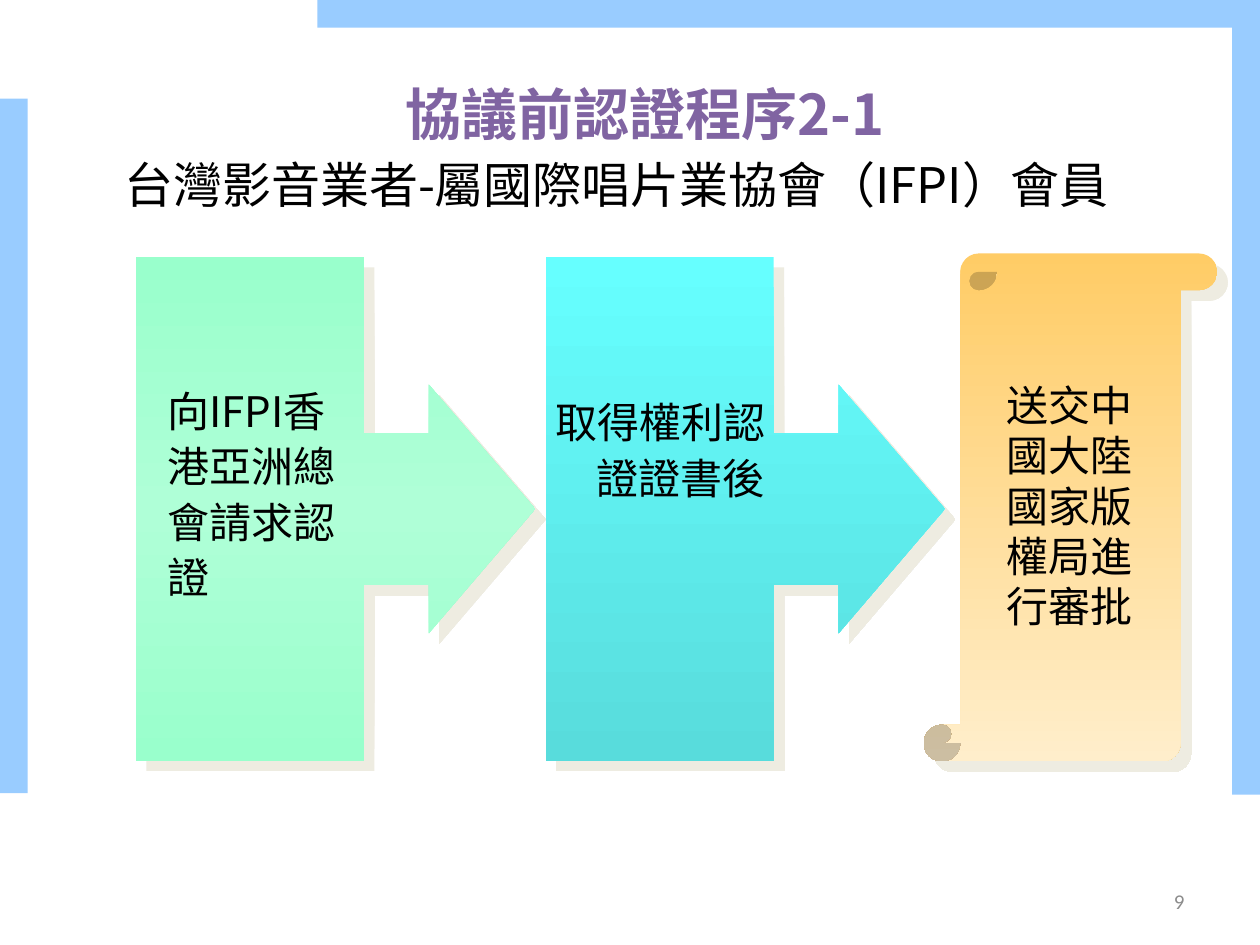
from copy import deepcopy
from dataclasses import dataclass

from lxml import etree
from pptx import Presentation
from pptx import util as u
from pptx.dml.color import RGBColor
from pptx.enum import shapes, text
from pptx.oxml import ns


@dataclass(frozen=True)
class Theme:
    frame: str = "99CCFF"
    title: str = "8064A2"
    body: str = "000000"
    number: str = "8C8C8C"
    shadow: str = "EEECE1"
    green: tuple = ("99FFCC", "AFFFD7", "99FFCC")
    cyan: tuple = ("66FFFF", "58DCDC")
    gold: tuple = ("FFCC66", "FFEECB")
    cjk_font: str = "Noto Sans CJK SC"
    latin_font: str = "Calibri"
    title_size: int = 32
    subtitle_size: int = 28
    body_size: int = 24
    number_size: int = 12


def write(frame, words, *, font, size, color, bold=False,
          align=text.PP_ALIGN.LEFT, line_spacing=None, hanging=0):
    para = frame.paragraphs[0]
    para.alignment = align
    para.space_before = u.Pt(0)
    if line_spacing:
        para.line_spacing = line_spacing
    if hanging:
        properties = para._p.get_or_add_pPr()
        properties.set("marL", str(u.Cm(hanging)))
        properties.set("indent", str(-u.Cm(hanging)))
    span = para.add_run()
    span.text = words
    span.font.size = u.Pt(size)
    span.font.bold = bold
    span.font.color.rgb = RGBColor.from_string(color)
    span.font.name = font
    etree.SubElement(span.font._element, ns.qn("a:ea"), typeface=font)


class SlideBuilder:
    def __init__(self, slide, theme):
        self.slide = slide
        self.theme = theme

    def shape(self, kind, area, adjustments=()):
        shape = self.slide.shapes.add_shape(kind, *map(u.Cm, area))
        shape.shadow.inherit = False
        shape.line.fill.background()
        for index, value in enumerate(adjustments):
            shape.adjustments[index] = value
        return shape

    def bar(self, *area):
        bar = self.shape(shapes.MSO_SHAPE.RECTANGLE, area)
        bar.fill.solid()
        bar.fill.fore_color.rgb = RGBColor.from_string(self.theme.frame)

    def panel(self, kind, area, colors, adjustments):
        panel = self.shape(kind, area, adjustments)
        panel.fill.gradient()
        panel.fill.gradient_angle = 270
        stop_list = panel._element.spPr.find(".//" + ns.qn("a:gsLst"))
        while len(stop_list) < len(colors):
            stop_list.append(deepcopy(stop_list[-1]))
        for index, (stop, color) in enumerate(zip(panel.fill.gradient_stops, colors)):
            stop.position = index / (len(colors) - 1)
            stop.color.rgb = RGBColor.from_string(color)
        self.drop_shadow(panel)

    def drop_shadow(self, shape):
        effects = shape._element.spPr.find(ns.qn("a:effectLst"))
        shadow = etree.SubElement(effects, ns.qn("a:outerShdw"), blurRad="0",
                                  dist=str(u.Pt(8.5)), dir="2700000",
                                  algn="ctr", rotWithShape="0")
        etree.SubElement(shadow, ns.qn("a:srgbClr"), val=self.theme.shadow)

    def text(self, words, area, anchor=text.MSO_ANCHOR.TOP, **style):
        box = self.slide.shapes.add_textbox(*map(u.Cm, area))
        box.text_frame.word_wrap = True
        box.text_frame.vertical_anchor = anchor
        defaults = {"font": self.theme.cjk_font, "size": self.theme.body_size,
                    "color": self.theme.body}
        write(box.text_frame, words, **(defaults | style))


def main():
    theme = Theme()
    deck = Presentation()
    deck.slide_width, deck.slide_height = u.Cm(25.4), u.Cm(19.05)
    page = SlideBuilder(deck.slides.add_slide(deck.slide_layouts[6]), theme)
    align = text.PP_ALIGN

    page.bar(6.4, 0, 19, 0.56)
    page.bar(24.84, 0.53, 0.56, 15.49)
    page.bar(0, 1.99, 0.56, 14)

    page.text("協議前認證程序2-1", (4.65, 1.47, 16.71, 1.63), size=theme.title_size,
              color=theme.title, bold=True, align=align.CENTER)
    page.text("台灣影音業者-屬國際唱片業協會（IFPI）會員", (2.26, 3, 21.87, 1.45),
              size=theme.subtitle_size)

    for step, colors in enumerate((theme.green, theme.cyan)):
        page.panel(shapes.MSO_SHAPE.RIGHT_ARROW_CALLOUT,
                   (2.74 + step * 8.26, 5.18, 8.05, 10.16), colors,
                   (0.38, 0.311, 0.266, 0.571))
    page.panel(shapes.MSO_SHAPE.VERTICAL_SCROLL, (18.62, 5.11, 5.92, 10.24),
               theme.gold, (0.125,))

    page.text("向IFPI香港亞洲總會請求認證", (3.12, 7.54, 4.06, 4.7), line_spacing=1.1)
    page.text("取得權利認證證書後", (10.92, 7.77, 4.78, 2.44), line_spacing=1.1,
              align=align.CENTER, hanging=0.8)
    page.text("送交中國大陸國家版權局進行審批", (20.04, 7.52, 3.18, 5.38))
    page.text("9", (18.21, 17.65, 5.92, 1.02), anchor=text.MSO_ANCHOR.MIDDLE,
              font=theme.latin_font, size=theme.number_size, color=theme.number,
              align=align.RIGHT)

    deck.save("out.pptx")


if __name__ == "__main__":
    main()
